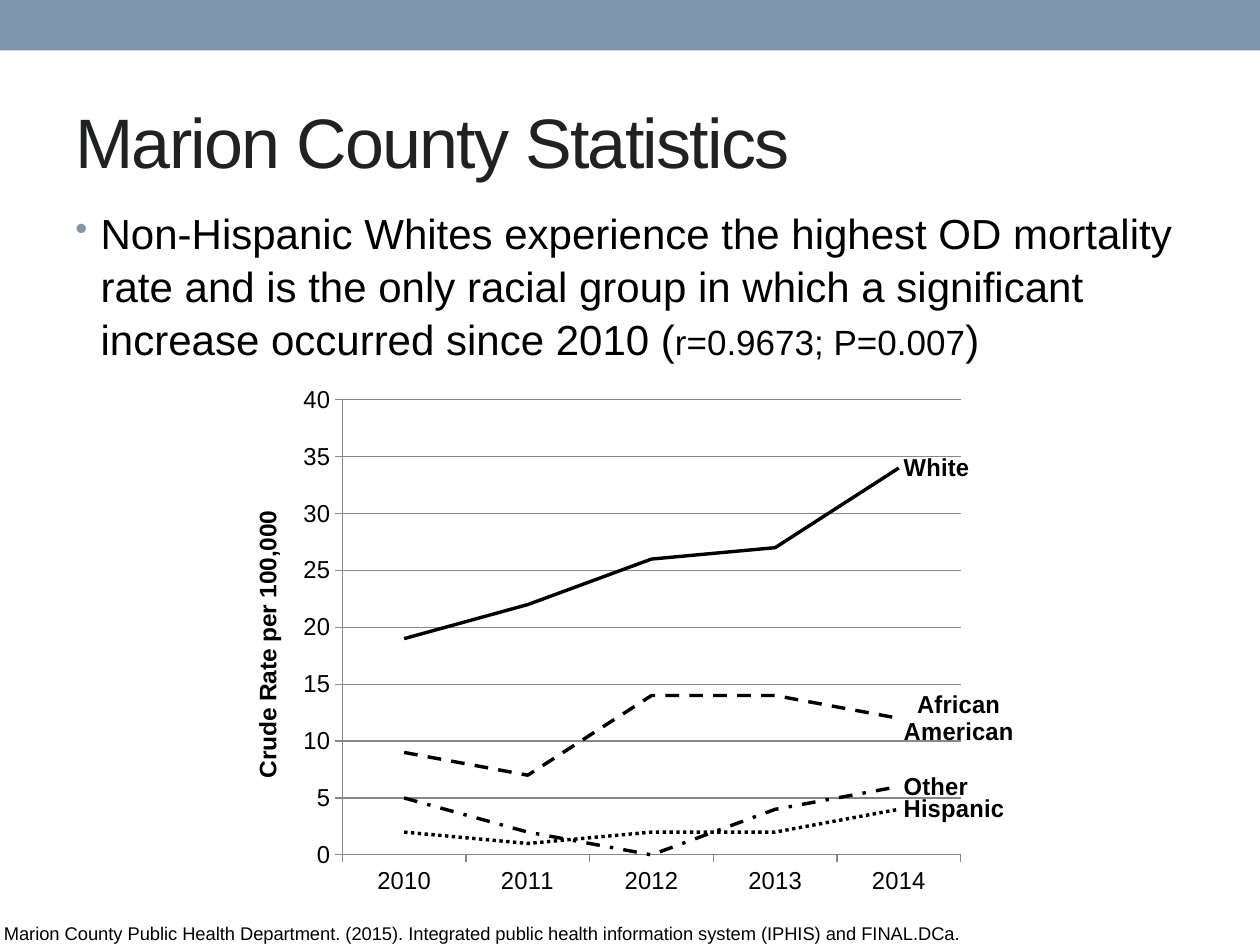
from lxml import etree
from pptx import Presentation
from pptx.chart.data import CategoryChartData
from pptx.dml.color import RGBColor
from pptx.enum.chart import XL_CHART_TYPE as ChartType
from pptx.enum.chart import XL_LABEL_POSITION as LabelPosition
from pptx.enum.chart import XL_MARKER_STYLE as MarkerStyle
from pptx.enum.chart import XL_TICK_MARK as TickMark
from pptx.enum.dml import MSO_LINE_DASH_STYLE as Dash
from pptx.enum.shapes import MSO_SHAPE as Shape
from pptx.enum.text import MSO_ANCHOR as Anchor
from pptx.oxml import parse_xml
from pptx.oxml.ns import nsdecls, qn
from pptx.util import Cm, Pt

COLORS = {"band": "7E97AD", "title": "1F2123", "text": "000000", "grid": "878787"}
FONT = "Arial"


def rgb(name):
    return RGBColor.from_string(COLORS[name])


def add_text(slide, box, runs, color="text", anchor=Anchor.TOP, inset=(0.25, 0.13), tracking=None):
    """Add a one-paragraph text box; runs are (text, point size) pairs."""
    frame = slide.shapes.add_textbox(*[Cm(length) for length in box]).text_frame
    frame.word_wrap = True
    frame.vertical_anchor = anchor
    frame.margin_left = frame.margin_right = Cm(inset[0])
    frame.margin_top = frame.margin_bottom = Cm(inset[1])
    paragraph = frame.paragraphs[0]
    for text, size in runs:
        run = paragraph.add_run()
        run.text = text
        run.font.name = FONT
        run.font.size = Pt(size)
        run.font.color.rgb = rgb(color)
        if tracking:
            run.font._element.set("spc", str(tracking))
    return paragraph


prs = Presentation()
prs.slide_width, prs.slide_height = Cm(25.4), Cm(19.05)
slide = prs.slides.add_slide(prs.slide_layouts[6])

band = slide.shapes.add_shape(Shape.RECTANGLE, 0, 0, prs.slide_width, Cm(1.02))
band.shadow.inherit = False
band.fill.solid()
band.fill.fore_color.rgb = rgb("band")
band.line.fill.background()

add_text(slide, (1.27, 1.47, 20.12, 2.74), [("Marion County Statistics", 40)],
         color="title", anchor=Anchor.MIDDLE, tracking=-100)

finding = add_text(slide, (1.27, 4.01, 22.86, 3.4), [
    ("Non-Hispanic Whites experience the highest OD mortality rate and is the only "
     "racial group in which a significant increase occurred since 2010 (", 24),
    ("r=0.9673; P=0.007", 20),
    (")", 24),
])
finding.line_spacing = 1.05
finding.space_before = Pt(2)
finding.space_after = Pt(6)
bullet = finding._p.get_or_add_pPr()
bullet.set("marL", str(Cm(0.51)))
bullet.set("indent", str(-Cm(0.51)))
color_node = etree.SubElement(bullet, qn("a:buClr"))
etree.SubElement(color_node, qn("a:srgbClr"), val=COLORS["band"])
etree.SubElement(bullet, qn("a:buSzPct"), val="85000")
etree.SubElement(bullet, qn("a:buChar"), char="•")

add_text(slide, (0.08, 18.59, 25.12, 0.46), [
    ("Marion County Public Health Department. (2015). Integrated public health "
     "information system (IPHIS) and FINAL.DCa.", 10.5)], inset=(0, 0))

rates = [
    ("White", (19, 22, 26, 27, 34), Dash.SOLID),
    ("African American", (9, 7, 14, 14, 12), Dash.DASH),
    ("Hispanic", (2, 1, 2, 2, 4), Dash.ROUND_DOT),
    ("Other", (5, 2, 0, 4, 6), Dash.DASH_DOT),
]
data = CategoryChartData(number_format="#,##0")
data.categories = ["2010", "2011", "2012", "2013", "2014"]
for group, values, _ in rates:
    data.add_series(group, values)
chart = slide.shapes.add_chart(
    ChartType.LINE, Cm(4.95), Cm(7.42), Cm(15.49), Cm(10.67), data).chart
chart.has_legend = False
chart.has_title = False
chart.font.name = FONT
chart.font.size = Pt(14)
chart.font.color.rgb = rgb("text")

rate_axis = chart.value_axis
rate_axis.minimum_scale, rate_axis.maximum_scale, rate_axis.major_unit = 0, 40, 5
rate_axis.has_major_gridlines = True
rate_axis.major_gridlines.format.line.color.rgb = rgb("grid")
rate_axis.tick_labels.number_format = "#,##0"
rate_axis.tick_labels.number_format_is_linked = False
axis_title = rate_axis.axis_title.text_frame
axis_title.text = "Crude Rate per 100,000"
title_font = axis_title.paragraphs[0].runs[0].font
title_font.name, title_font.size, title_font.bold = FONT, Pt(14), True
title_font.color.rgb = rgb("text")
for axis in (rate_axis, chart.category_axis):
    axis.major_tick_mark = TickMark.OUTSIDE
    axis.minor_tick_mark = TickMark.NONE
    axis.format.line.color.rgb = rgb("grid")
    axis.tick_labels.font.size = Pt(14)

plot = chart.plots[0]
plot.vary_by_categories = False
for series, (_, values, dash) in zip(plot.series, rates):
    series.smooth = False
    series.marker.style = MarkerStyle.NONE
    series.format.line.color.rgb = rgb("text")
    series.format.line.width = Pt(2)
    series.format.line.dash_style = dash
    end_label = series.points[len(values) - 1].data_label
    end_label.position = LabelPosition.RIGHT
    end_label.font.name = FONT
    end_label.font.size = Pt(14)
    end_label.font.bold = True
    end_label.font.color.rgb = rgb("text")
    for flag in series._element.xpath(".//c:showVal"):
        flag.set("val", "0")
    for flag in series._element.xpath(".//c:dLbl/c:showSerName"):
        flag.set("val", "1")

plot_area = chart._chartSpace.xpath("c:chart/c:plotArea")[0]
for old_layout in plot_area.findall(qn("c:layout")):
    plot_area.remove(old_layout)
position = "".join(f'<c:{side} val="{share}"/>' for side, share in
                   (("x", 0.13), ("y", 0.06), ("w", 0.83), ("h", 0.86)))
plot_area.insert(0, parse_xml(
    f'<c:layout {nsdecls("c")}><c:manualLayout><c:layoutTarget val="inner"/>'
    f'<c:xMode val="edge"/><c:yMode val="edge"/>{position}</c:manualLayout></c:layout>'))

prs.save("out.pptx")
